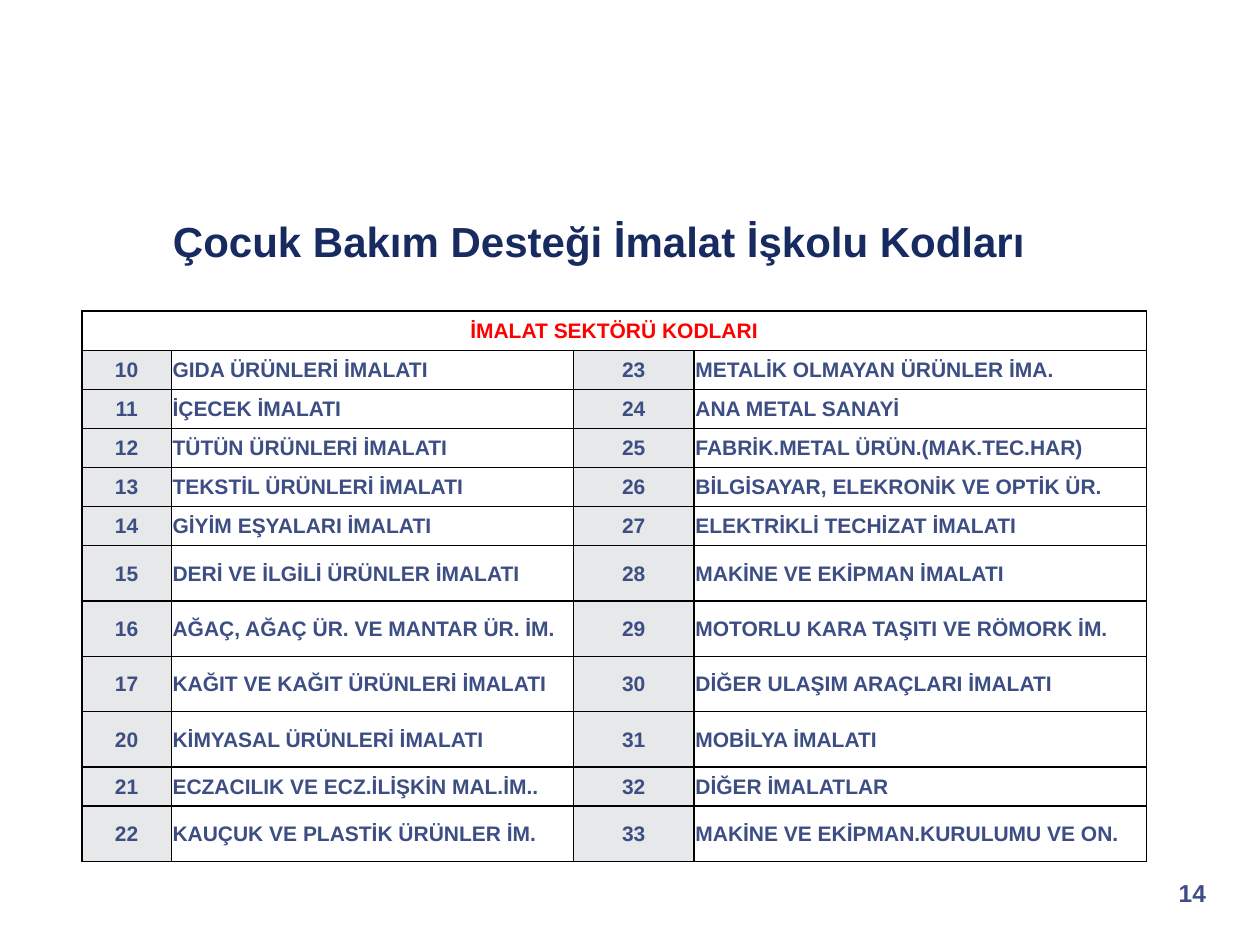
from lxml.etree import SubElement
from pptx import Presentation
from pptx.dml.color import RGBColor
from pptx.enum.text import MSO_ANCHOR as Anchor, PP_ALIGN as Align
from pptx.oxml.ns import qn
from pptx.util import Inches, Pt

NAVY = RGBColor(0x17, 0x2B, 0x61)
SLATE = RGBColor(0x3D, 0x4E, 0x84)
RED = RGBColor(0xFF, 0x00, 0x00)
GREY = RGBColor(0xE7, 0xE8, 0xE9)
WHITE = RGBColor(0xFF, 0xFF, 0xFF)
BLACK = RGBColor(0x00, 0x00, 0x00)

HEADING = "İMALAT SEKTÖRÜ KODLARI"
SECTORS = [
    ("10", "GIDA ÜRÜNLERİ İMALATI", "23", "METALİK OLMAYAN ÜRÜNLER İMA."),
    ("11", "İÇECEK İMALATI", "24", "ANA METAL SANAYİ"),
    ("12", "TÜTÜN ÜRÜNLERİ İMALATI", "25", "FABRİK.METAL ÜRÜN.(MAK.TEC.HAR)"),
    ("13", "TEKSTİL ÜRÜNLERİ İMALATI", "26", "BİLGİSAYAR, ELEKRONİK VE OPTİK ÜR."),
    ("14", "GİYİM EŞYALARI İMALATI", "27", "ELEKTRİKLİ TECHİZAT İMALATI"),
    ("15", "DERİ VE İLGİLİ ÜRÜNLER İMALATI", "28", "MAKİNE VE EKİPMAN İMALATI"),
    ("16", "AĞAÇ, AĞAÇ ÜR. VE MANTAR ÜR. İM.", "29", "MOTORLU KARA TAŞITI VE RÖMORK İM."),
    ("17", "KAĞIT VE KAĞIT ÜRÜNLERİ İMALATI", "30", "DİĞER ULAŞIM ARAÇLARI İMALATI"),
    ("20", "KİMYASAL ÜRÜNLERİ İMALATI", "31", "MOBİLYA İMALATI"),
    ("21", "ECZACILIK VE ECZ.İLİŞKİN MAL.İM..", "32", "DİĞER İMALATLAR"),
    ("22", "KAUÇUK VE PLASTİK ÜRÜNLER İM.", "33", "MAKİNE VE EKİPMAN.KURULUMU VE ON."),
]
TALL_CODES = {"15", "16", "17", "20", "22"}
COLUMN_WIDTHS = [0.71, 3.19, 0.96, 3.59]


def write(frame, text, size=12, color=SLATE, align=Align.LEFT, bold=True, font="Arial"):
    paragraph = frame.paragraphs[0]
    paragraph.alignment = align
    run = paragraph.add_run()
    run.text = text
    run.font.name = font
    run.font.size = Pt(size)
    run.font.bold = bold
    run.font.color.rgb = color


class SlideBuilder:
    border_width = 1
    border_color = BLACK

    def __init__(self, slide):
        self.slide = slide

    def title(self, text, left, top, width, height):
        heading = self.slide.shapes.title
        heading.left, heading.top = Inches(left), Inches(top)
        heading.width, heading.height = Inches(width), Inches(height)
        heading.text_frame.vertical_anchor = Anchor.MIDDLE
        write(heading.text_frame, text, size=24, color=NAVY, align=Align.CENTER)

    def label(self, text, left, top, width, height, **style):
        box = self.slide.shapes.add_textbox(
            Inches(left), Inches(top), Inches(width), Inches(height))
        box.text_frame.word_wrap = True
        write(box.text_frame, text, **style)

    def cell(self, cell, text, fill=WHITE, **style):
        cell.vertical_anchor = Anchor.MIDDLE
        cell.margin_left = cell.margin_top = cell.margin_right = Inches(0.01)
        cell.margin_bottom = 0
        if text:
            write(cell.text_frame, text, **style)
        properties = cell._tc.get_or_add_tcPr()
        for side in ("a:lnL", "a:lnR", "a:lnT", "a:lnB"):
            border = SubElement(properties, qn(side), w=str(Pt(self.border_width)))
            paint = SubElement(border, qn("a:solidFill"))
            SubElement(paint, qn("a:srgbClr"), val=str(self.border_color))
        cell.fill.solid()
        cell.fill.fore_color.rgb = fill

    def code_table(self, heading, sectors, left, top):
        heights = [0.31] + [0.44 if row[0] in TALL_CODES else 0.31 for row in sectors]
        table = self.slide.shapes.add_table(
            len(heights), len(COLUMN_WIDTHS), Inches(left), Inches(top),
            Inches(sum(COLUMN_WIDTHS)), Inches(sum(heights))).table
        table.first_row = table.horz_banding = False
        for column, width in zip(table.columns, COLUMN_WIDTHS):
            column.width = Inches(width)
        for row, height in zip(table.rows, heights):
            row.height = Inches(height)

        table.cell(0, 0).merge(table.cell(0, len(COLUMN_WIDTHS) - 1))
        for index in range(len(COLUMN_WIDTHS)):
            self.cell(table.cell(0, index), "" if index else heading,
                      color=RED, align=Align.CENTER)
        for row_index, sector in enumerate(sectors, start=1):
            for index, text in enumerate(sector):
                is_code = index % 2 == 0
                self.cell(table.cell(row_index, index), text,
                          fill=GREY if is_code else WHITE,
                          align=Align.CENTER if is_code else Align.LEFT)


def main():
    presentation = Presentation()
    presentation.slide_width, presentation.slide_height = Inches(10), Inches(7.5)
    slide = presentation.slides.add_slide(presentation.slide_layouts[5])
    builder = SlideBuilder(slide)
    builder.title("Çocuk Bakım Desteği İmalat İşkolu Kodları ", 0.51, 1.41, 8.58, 1)
    builder.code_table(HEADING, SECTORS, 0.65, 2.47)
    builder.label("14", 9.1, 6.92, 0.57, 0.5, size=14, align=Align.RIGHT)
    presentation.save("out.pptx")


if __name__ == "__main__":
    main()
